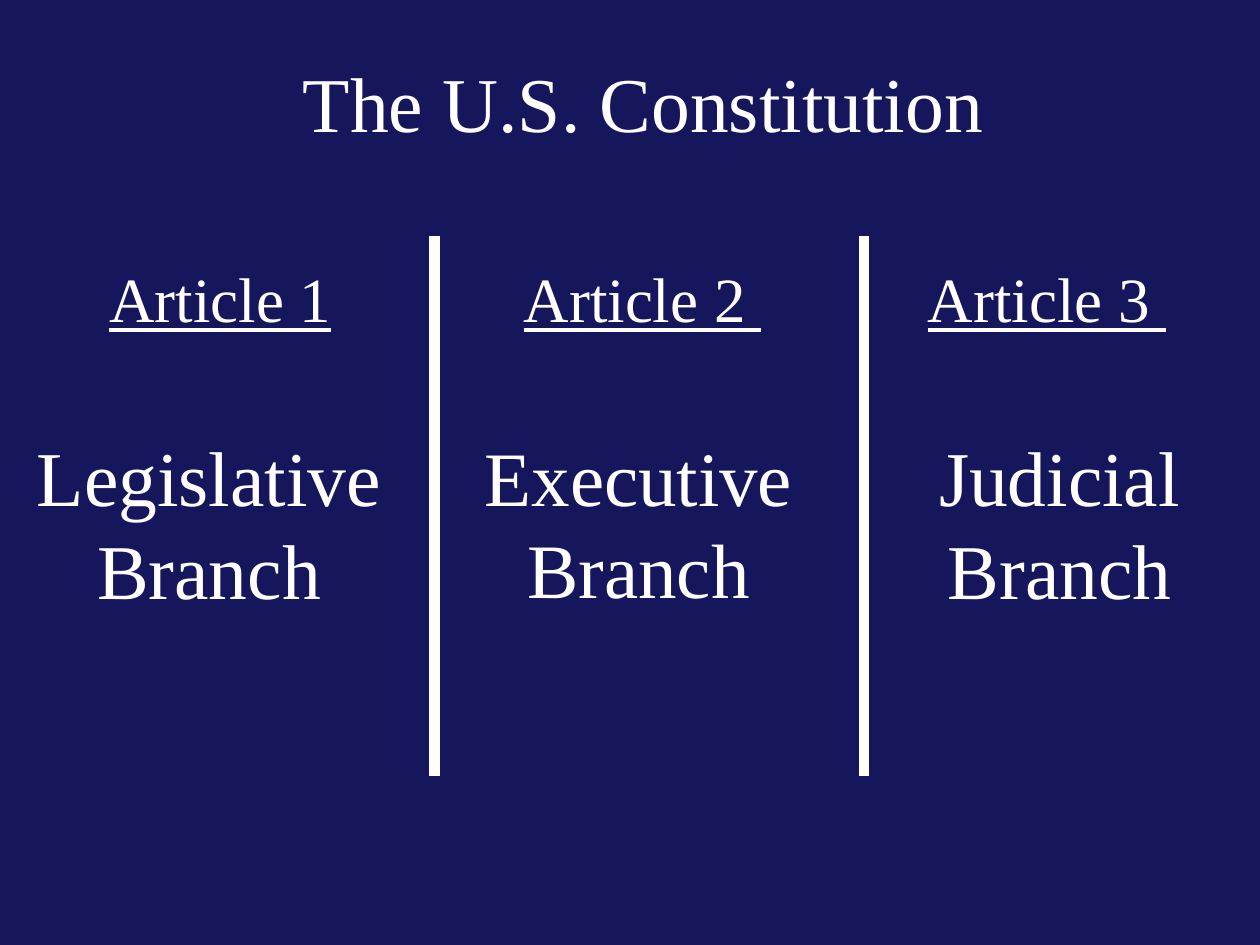
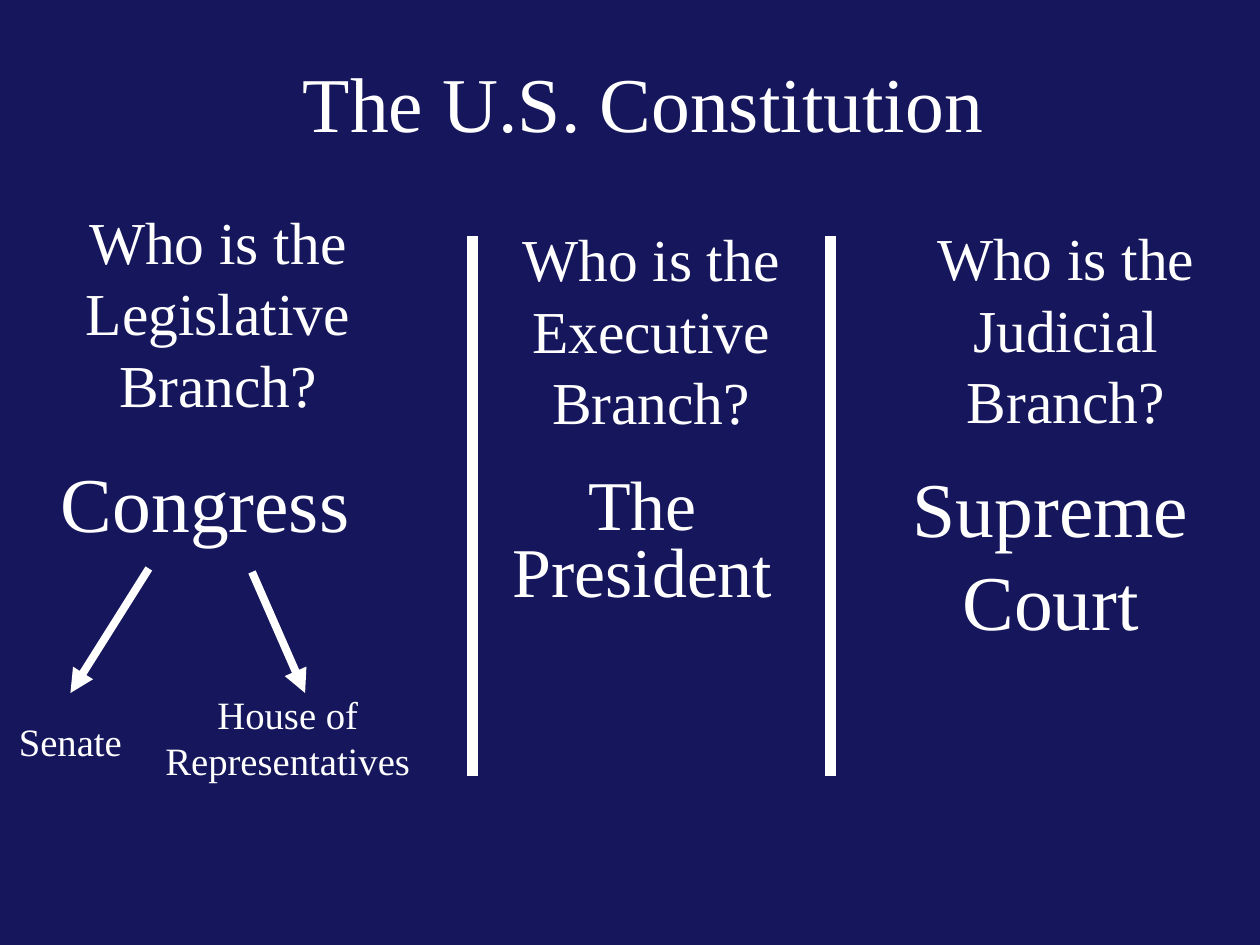
from dataclasses import dataclass

from lxml import etree
from pptx import Presentation
from pptx import util as u
from pptx.dml.color import RGBColor
from pptx.enum import shapes, text
from pptx.oxml import ns


@dataclass(frozen=True)
class Theme:
    night: RGBColor = RGBColor(0x16, 0x16, 0x5D)
    white: RGBColor = RGBColor(0xFF, 0xFF, 0xFF)
    font: str = "Times New Roman"
    heading: float = 44.3
    executive: float = 44
    president: float = 39.9
    article: float = 36
    question: float = 34
    chamber: float = 22.1
    divider: float = 6
    arrow: float = 4.5
    inset: float = 0.13


THEME = Theme()
COLUMN = 7.87
WIDE_COLUMN = 8.74
DIVIDER_TOP, DIVIDER_BOTTOM = 4.75, 15.65


def add_label(slide, wording, left, top, width, height, size, underline=None,
              spacing=None, align=text.PP_ALIGN.CENTER,
              anchor=text.MSO_ANCHOR.MIDDLE, wrap=True):
    label = slide.shapes.add_textbox(u.Cm(left), u.Cm(top), u.Cm(width), u.Cm(height))
    frame = label.text_frame
    frame.word_wrap = wrap
    frame.vertical_anchor = anchor
    frame.margin_left = frame.margin_right = u.Cm(THEME.inset)
    frame.margin_top = frame.margin_bottom = u.Cm(THEME.inset)
    paragraph = frame.paragraphs[0]
    paragraph.text = wording
    paragraph.alignment = align
    paragraph.line_spacing = spacing
    paragraph.font.name = THEME.font
    paragraph.font.size = u.Pt(size)
    paragraph.font.underline = underline
    paragraph.font.color.rgb = THEME.white


def add_line(slide, start, end, weight, arrowhead=False):
    line = slide.shapes.add_connector(
        shapes.MSO_CONNECTOR.STRAIGHT, *(u.Cm(value) for value in (*start, *end)))
    line.line.color.rgb = THEME.white
    line.line.width = u.Pt(weight)
    if arrowhead:
        etree.SubElement(line.line._get_or_add_ln(), ns.qn("a:tailEnd"), type="triangle")
    etree.SubElement(line._element.spPr, ns.qn("a:effectLst"))


def add_constitution_slide(deck, divider_positions):
    slide = deck.slides.add_slide(deck.slide_layouts[6])
    slide.background.fill.solid()
    slide.background.fill.fore_color.rgb = THEME.night
    add_label(slide, "The U.S. Constitution", 5.49, 0.99, 14.94, 2.13, THEME.heading)
    for x in divider_positions:
        add_line(slide, (x, DIVIDER_TOP), (x, DIVIDER_BOTTOM), THEME.divider)
    return slide


def build_articles(deck):
    slide = add_constitution_slide(deck, (8.76, 17.42))
    for article, left in (("Article 1", 0.51), ("Article 2 ", 9.02), ("Article 3 ", 17.17)):
        add_label(slide, article, left, 5.11, COLUMN, 1.78, THEME.article, underline=True)
    for branch, left, width, size in (
            ("Legislative", 0.28, COLUMN, THEME.heading),
            ("Executive", 8.94, COLUMN, THEME.executive),
            ("Judicial", 16.99, WIDE_COLUMN, THEME.heading)):
        add_label(slide, f"{branch} Branch", left, 8.51, width, 4.01, size)


def build_branch_members(deck):
    slide = add_constitution_slide(deck, (9.53, 16.74))
    for branch, left, top in (("Legislative", 0.46, 3.99),
                              ("Executive", 9.19, 4.34),
                              ("Judicial", 17.55, 4.32)):
        add_label(slide, f"Who is the {branch} Branch?", left, top, COLUMN, 4.6,
                  THEME.question)

    add_label(slide, "Congress", 0.2, 9.04, COLUMN, 2.13, THEME.heading)
    add_label(slide, "The President", 9.02, 9.47, COLUMN, 3, THEME.president, spacing=0.8)
    add_label(slide, "Supreme Court", 16.81, 9.14, WIDE_COLUMN, 4.01, THEME.heading)

    for start, end in (((5.08, 11.53), (6.15, 13.97)), ((3, 11.46), (1.42, 13.97))):
        add_line(slide, start, end, THEME.arrow, arrowhead=True)
    add_label(slide, "Senate", 0.25, 14.35, 2.34, 1.19, THEME.chamber,
              align=text.PP_ALIGN.LEFT, anchor=text.MSO_ANCHOR.TOP, wrap=False)
    add_label(slide, "House of Representatives", 3.02, 13.79, 5.56, 2.13, THEME.chamber,
              anchor=text.MSO_ANCHOR.TOP)


def main():
    deck = Presentation()
    deck.slide_width, deck.slide_height = u.Cm(25.4), u.Cm(19.05)
    build_articles(deck)
    build_branch_members(deck)
    deck.save("out.pptx")


if __name__ == "__main__":
    main()
